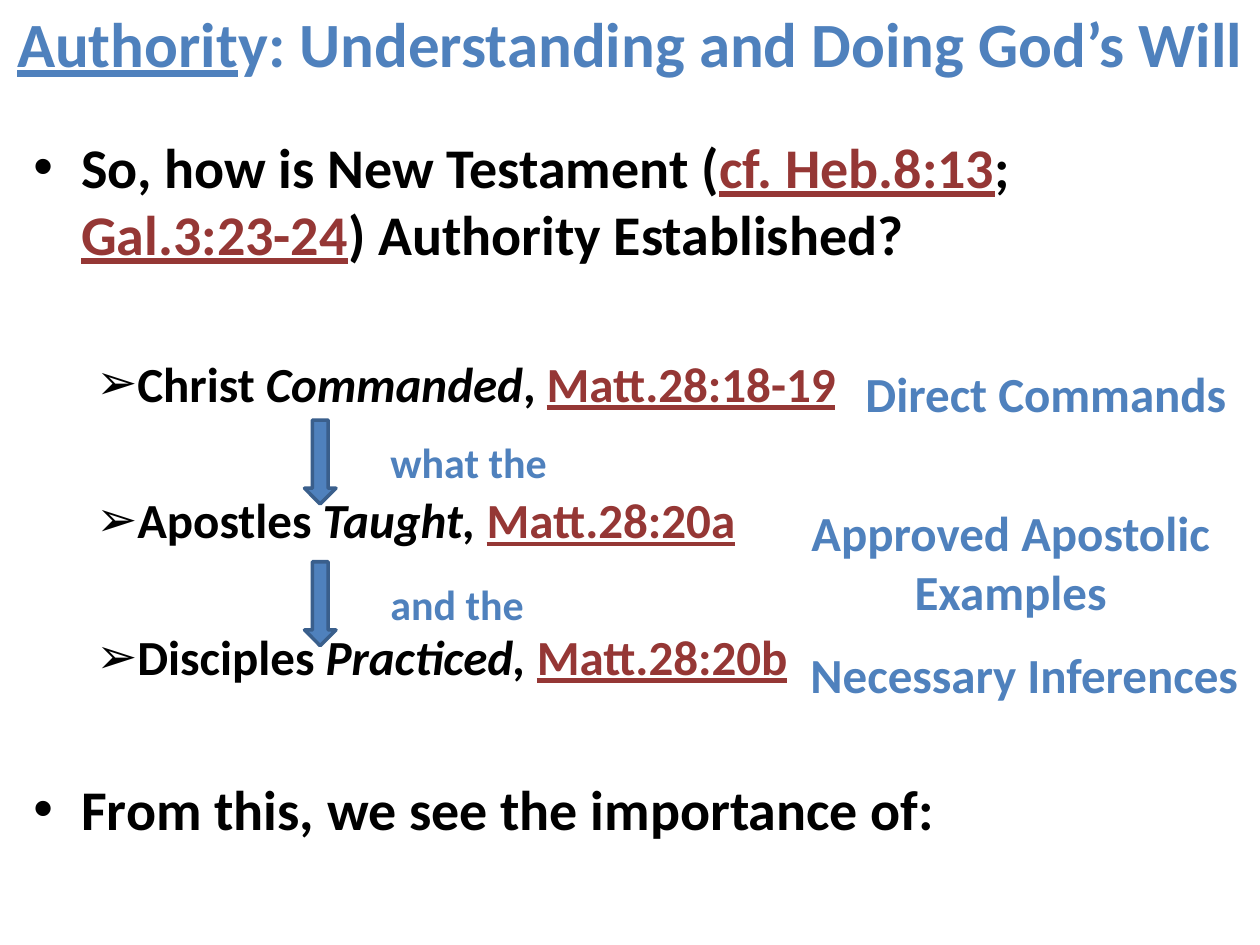
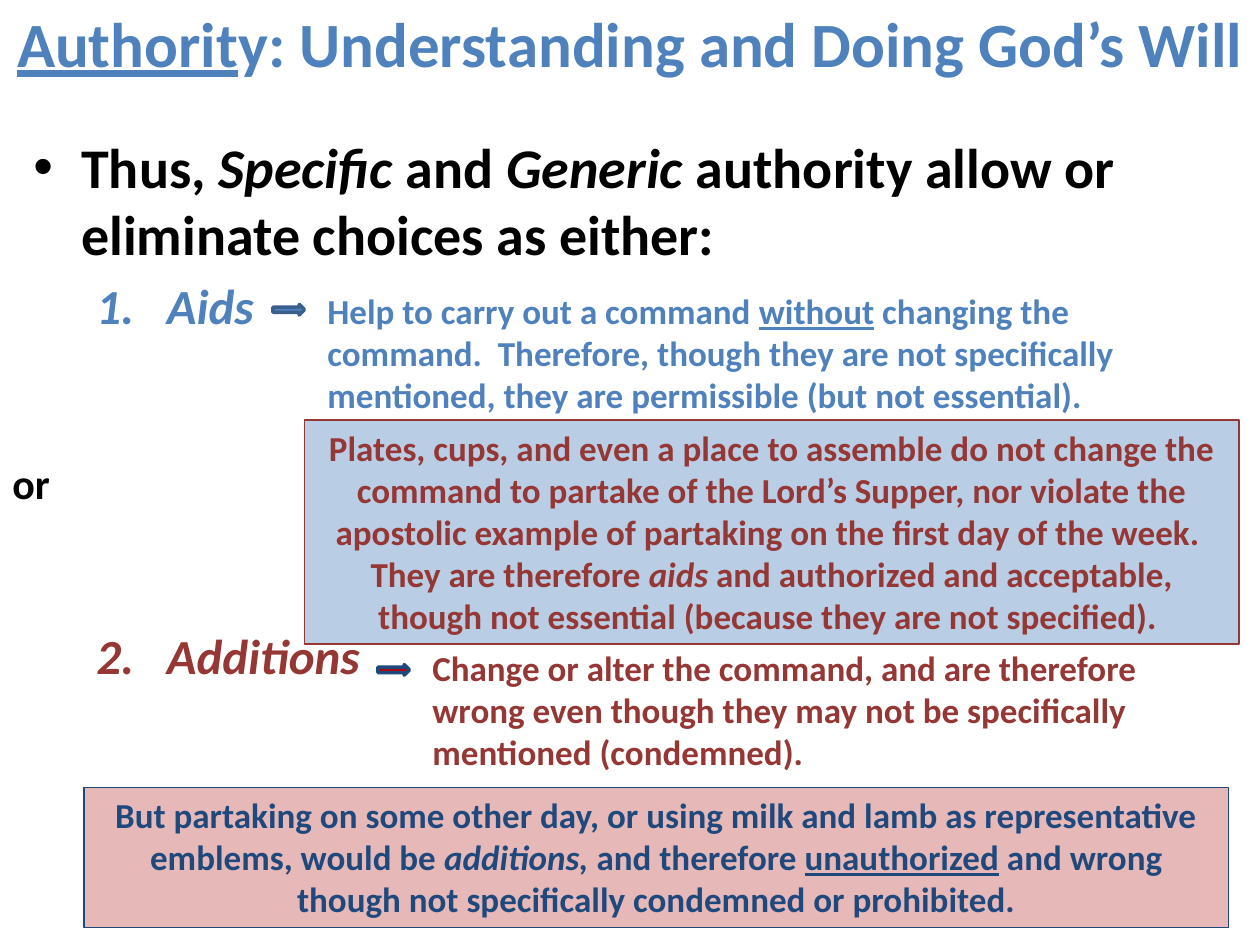
from lxml.etree import SubElement
from pptx import Presentation
from pptx.dml.color import RGBColor
from pptx.enum.shapes import MSO_SHAPE
from pptx.enum.text import MSO_ANCHOR, PP_ALIGN
from pptx.oxml.ns import qn
from pptx.util import Inches, Pt

HUES = {
    "blue": "4F81BD",
    "edge": "3A5F8C",
    "navy": "1F497D",
    "wine": "953735",
    "red": "C00000",
    "rose": "E6B9B8",
    "sky": "B9CDE5",
    "black": "000000",
}
FONT = "Calibri"
CELL = Inches(1) / 12
COLS, ROWS = 120, 90
DOT = ("buChar", {"char": "•"})
DART = ("buChar", {"char": "➢"})


def hue(name):
    return RGBColor.from_string(HUES[name])


def area(col, row, wide, high):
    return [round(part * CELL) for part in (col, row, wide, high)]


def ready(shape, anchor=MSO_ANCHOR.TOP):
    frame = shape.text_frame
    frame.word_wrap = True
    frame.vertical_anchor = anchor
    return frame


def fill(para, runs, size, color):
    for text, *marks in runs:
        run = para.add_run()
        run.text = text
        font = run.font
        font.name, font.size, font.bold = FONT, Pt(size), True
        font.italic = "i" in marks
        font.underline = "u" in marks
        own = [mark for mark in marks if mark in HUES]
        font.color.rgb = hue(own[0] if own else color)


def mark(para, bullet, left, hang):
    tag, attrs = bullet
    props = para._p.get_or_add_pPr()
    props.set("marL", str(Inches(left)))
    props.set("indent", str(-Inches(hang)))
    if bullet == DOT:
        SubElement(props, qn("a:buFont"), typeface="Arial")
    SubElement(props, qn("a:" + tag), **attrs)


def note(slide, place, runs, size=28, color="blue", align=PP_ALIGN.LEFT,
         anchor=MSO_ANCHOR.TOP):
    frame = ready(slide.shapes.add_textbox(*area(*place)), anchor)
    para = frame.paragraphs[0]
    para.alignment = align
    fill(para, runs, size, color)


def form(slide, kind, place, inside, edge, width):
    shape = slide.shapes.add_shape(kind, *area(*place))
    shape.shadow.inherit = False
    shape.fill.solid()
    shape.fill.fore_color.rgb = hue(inside)
    shape.line.color.rgb = hue(edge)
    shape.line.width = Pt(width)
    return shape


def panel(slide, place, inside, edge, runs, color):
    shape = form(slide, MSO_SHAPE.RECTANGLE, place, inside, edge, 0.75)
    para = ready(shape).paragraphs[0]
    para.alignment = PP_ALIGN.CENTER
    fill(para, runs, 20, color)


def body(slide, items):
    frame = ready(slide.shapes.add_textbox(*area(2, 12, COLS - 4, 76)))
    for spot, (runs, size, gap, bullet, left, hang, color) in enumerate(items):
        para = frame.add_paragraph() if spot else frame.paragraphs[0]
        para.space_before = Pt(gap)
        mark(para, bullet, left, hang)
        fill(para, runs, size, color)


def point(runs, gap=0):
    return runs, 32, gap, DOT, 0.38, 0.38, "black"


def step(who, deed, verse, gap):
    runs = [(who,), *deed, (verse, "u", "wine")]
    return runs, 28, gap, DART, 0.81, 0.31, "black"


def choice(text, start, gap, color):
    bullet = ("buAutoNum", {"type": "arabicPeriod", "startAt": str(start)})
    return [(text, "i")], 28, gap, bullet, 1.06, 0.56, color


def page(deck):
    slide = deck.slides.add_slide(deck.slide_layouts[6])
    runs = [("Authorit", "u"), ("y: Understanding and Doing God’s Will",)]
    note(slide, (0, 0, COLS, 8), runs, 36, "blue",
         PP_ALIGN.CENTER, MSO_ANCHOR.MIDDLE)
    return slide


def source(deck):
    slide = page(deck)
    body(slide, [
        point([("So, how is New Testament (",), ("cf. Heb.8:13", "u", "wine"),
               ("; ",), ("Gal.3:23-24", "u", "wine"),
               (") Authority Established?",)]),
        step("Christ ", [("Commanded", "i"), (", ",)], "Matt.28:18-19", 49.5),
        step("Apostles ", [("Taught, ", "i")], "Matt.28:20a", 44.5),
        step("Disciples ", [("Practiced, ", "i")], "Matt.28:20b", 44.5),
        point([("From this, we see the importance of:",)], 51),
    ])
    for row, text in ((40, "what the"), (53.5, "and the")):
        form(slide, MSO_SHAPE.DOWN_ARROW, (29, row, 3, 8), "blue", "edge", 2)
        note(slide, (36, row + 1, 27, 6), [(text,)], 24)
    note(slide, (81.25, 34, 37, 7), [("Direct Commands",)])
    note(slide, (75.75, 47.25, 41, 12.5), [("Approved Apostolic Examples",)],
         align=PP_ALIGN.CENTER)
    note(slide, (76, 60.75, 44, 7), [("Necessary Inferences",)])


def limits(deck):
    slide = page(deck)
    body(slide, [
        point([("Thus, ",), ("Specific ", "i"), ("and ",), ("Generic ", "i"),
               ("authority allow or eliminate choices as either:",)]),
        choice("Aids", 1, 5, "blue"),
        choice("Additions", 2, 166.5, "wine"),
    ])
    note(slide, (0, 43, 7, 6), [("or",)], 24, "black")
    note(slide, (30, 27, 86, 13.25), [
        ("Help to carry out a command ",), ("without", "u"),
        (" changing the command.  Therefore, though they are not specifically "
         "mentioned, they are permissible (but not essential).",)], 20)
    note(slide, (40, 61, 77, 13.25), [
        ("Change or alter the command, and are therefore wrong even though "
         "they may not be specifically mentioned (condemned).",)], 20, "wine")
    for col, row, inside, edge in ((26, 29, "blue", "edge"),
                                   (36, 63.3, "red", "navy")):
        form(slide, MSO_SHAPE.RIGHT_ARROW, (col, row, 3, 1), inside, edge, 2)
    panel(slide, (8, 75, 109, 13.35), "rose", "navy", [
        ("But partaking on some other day, or using milk and lamb as "
         "representative emblems, would be ",), ("additions, ", "i"),
        ("and therefore ",), ("unauthorized", "u"),
        (" and wrong though not specifically condemned or prohibited.",)],
        "navy")
    panel(slide, (29, 40, 89, 21.35), "sky", "wine", [
        ("Plates, cups, and even a place to assemble do not change the "
         "command to partake of the Lord’s Supper, nor violate the apostolic "
         "example of partaking on the first day of the week.  They are "
         "therefore ",), ("aids ", "i"),
        ("and authorized and acceptable, though not essential (because they "
         "are not specified). ",)], "wine")


def main():
    deck = Presentation()
    deck.slide_width = round(COLS * CELL)
    deck.slide_height = round(ROWS * CELL)
    source(deck)
    limits(deck)
    deck.save("out.pptx")


if __name__ == "__main__":
    main()
